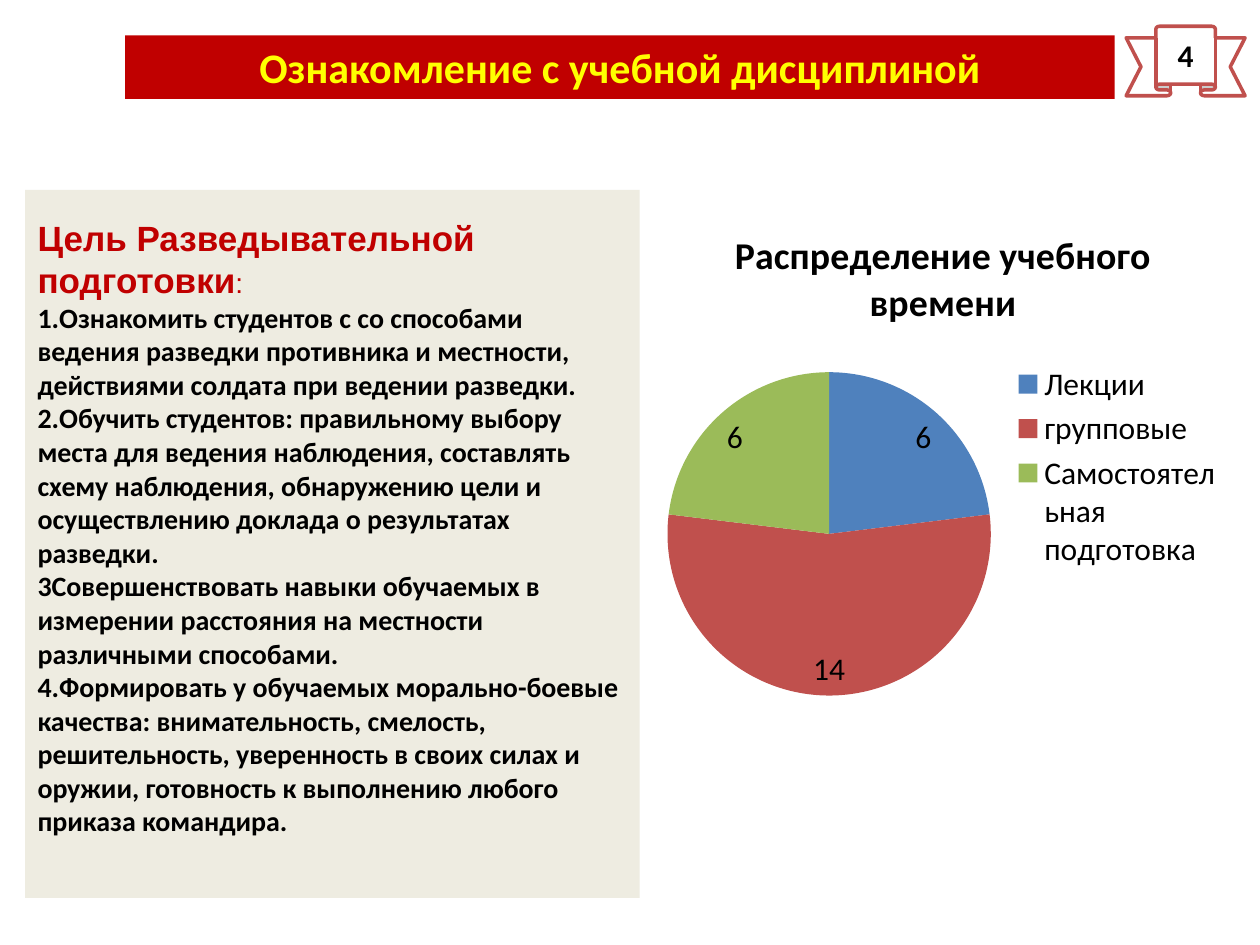
from pptx import Presentation
from pptx.chart.data import CategoryChartData
from pptx.dml.color import RGBColor
from pptx.enum.chart import XL_CHART_TYPE, XL_LABEL_POSITION, XL_LEGEND_POSITION
from pptx.enum.shapes import MSO_SHAPE
from pptx.enum.text import MSO_ANCHOR, PP_ALIGN
from pptx.util import Pt

WHITE = RGBColor(0xFF, 0xFF, 0xFF)
BLACK = RGBColor(0x00, 0x00, 0x00)
DARK_RED = RGBColor(0xC0, 0x00, 0x00)
YELLOW = RGBColor(0xFF, 0xFF, 0x00)
CREAM = RGBColor(0xEE, 0xEC, 0xE1)
BLUE = RGBColor(0x4F, 0x81, 0xBD)
RED = RGBColor(0xC0, 0x50, 0x4D)
GREEN = RGBColor(0x9B, 0xBB, 0x59)

GOALS = [
    "1.Ознакомить студентов с со способами ведения разведки противника и местности, "
    "действиями солдата при ведении разведки.",
    "2.Обучить студентов: правильному выбору места для ведения наблюдения, составлять "
    "схему наблюдения, обнаружению цели и осуществлению доклада о результатах разведки.",
    "3Совершенствовать навыки обучаемых в измерении расстояния на местности "
    "различными способами.",
    "4.Формировать у обучаемых морально-боевые качества: внимательность, смелость, "
    "решительность, уверенность в своих силах и оружии, готовность к выполнению "
    "любого приказа командира.",
]


def add_box(preset, left, top, width, height, fill):
    box = slide.shapes.add_shape(preset, Pt(left), Pt(top), Pt(width), Pt(height))
    box.shadow.inherit = False
    box.fill.solid()
    box.fill.fore_color.rgb = fill
    box.line.fill.background()
    frame = box.text_frame
    frame.word_wrap = True
    frame.vertical_anchor = MSO_ANCHOR.MIDDLE
    return box


def style(font, size, color, bold=True, name="Calibri"):
    font.name = name
    font.size = Pt(size)
    font.bold = bold
    font.color.rgb = color


prs = Presentation()
prs.slide_width, prs.slide_height = Pt(720), Pt(540)
slide = prs.slides.add_slide(prs.slide_layouts[6])

# Heading and page number
heading = add_box(MSO_SHAPE.RECTANGLE, 71.5, 20.2, 565.5, 36.35, DARK_RED)
page_ribbon = add_box(MSO_SHAPE.UP_RIBBON, 643.5, 15, 68, 39.7, WHITE)
page_ribbon.line.color.rgb = RED
page_ribbon.line.width = Pt(2)
for box, text, size, color in [
    (heading, "Ознакомление с учебной дисциплиной", 24, YELLOW),
    (page_ribbon, "4", 18, BLACK),
]:
    box.text_frame.text = text
    paragraph = box.text_frame.paragraphs[0]
    paragraph.alignment = PP_ALIGN.CENTER
    style(paragraph.runs[0].font, size, color)

# Study time pie
hours = CategoryChartData()
hours.categories = ["Лекции", "групповые", "Самостоятельная подготовка"]
hours.add_series("Series 1", [6, 14, 6])
chart = slide.shapes.add_chart(
    XL_CHART_TYPE.PIE, Pt(371.5), Pt(116.6), Pt(334.8), Pt(300.2), hours
).chart
style(chart.font, 18, BLACK, bold=False)
chart.has_title = True
chart.chart_title.text_frame.text = "Распределение учебного времени"
style(chart.chart_title.text_frame.paragraphs[0].runs[0].font, 21.6, BLACK)
chart.has_legend = True
chart.legend.position = XL_LEGEND_POSITION.RIGHT
chart.legend.include_in_layout = False

pie = chart.plots[0]
pie.vary_by_categories = True
pie.has_data_labels = True
pie.data_labels.show_value = True
pie.data_labels.show_percentage = False
pie.data_labels.position = XL_LABEL_POSITION.INSIDE_END
for index, color in enumerate([BLUE, RED, GREEN]):
    slice_fill = pie.series[0].points[index].format.fill
    slice_fill.solid()
    slice_fill.fore_color.rgb = color

# Goals of the course
goals = add_box(MSO_SHAPE.RECTANGLE, 14.4, 108.6, 351.2, 404.5, CREAM).text_frame
goals.margin_bottom = Pt(23)
goals.text = "Цель Разведывательной подготовки"
goals_title = goals.paragraphs[0]
goals_title.alignment = PP_ALIGN.LEFT
style(goals_title.runs[0].font, 20, DARK_RED, name="Arial")
colon = goals_title.add_run()
colon.text = ":"
style(colon.font, 16, DARK_RED, bold=False, name="Arial")
for goal in GOALS:
    paragraph = goals.add_paragraph()
    paragraph.text = goal
    paragraph.alignment = PP_ALIGN.LEFT
    style(paragraph.runs[0].font, 16, BLACK)

prs.save("out.pptx")
